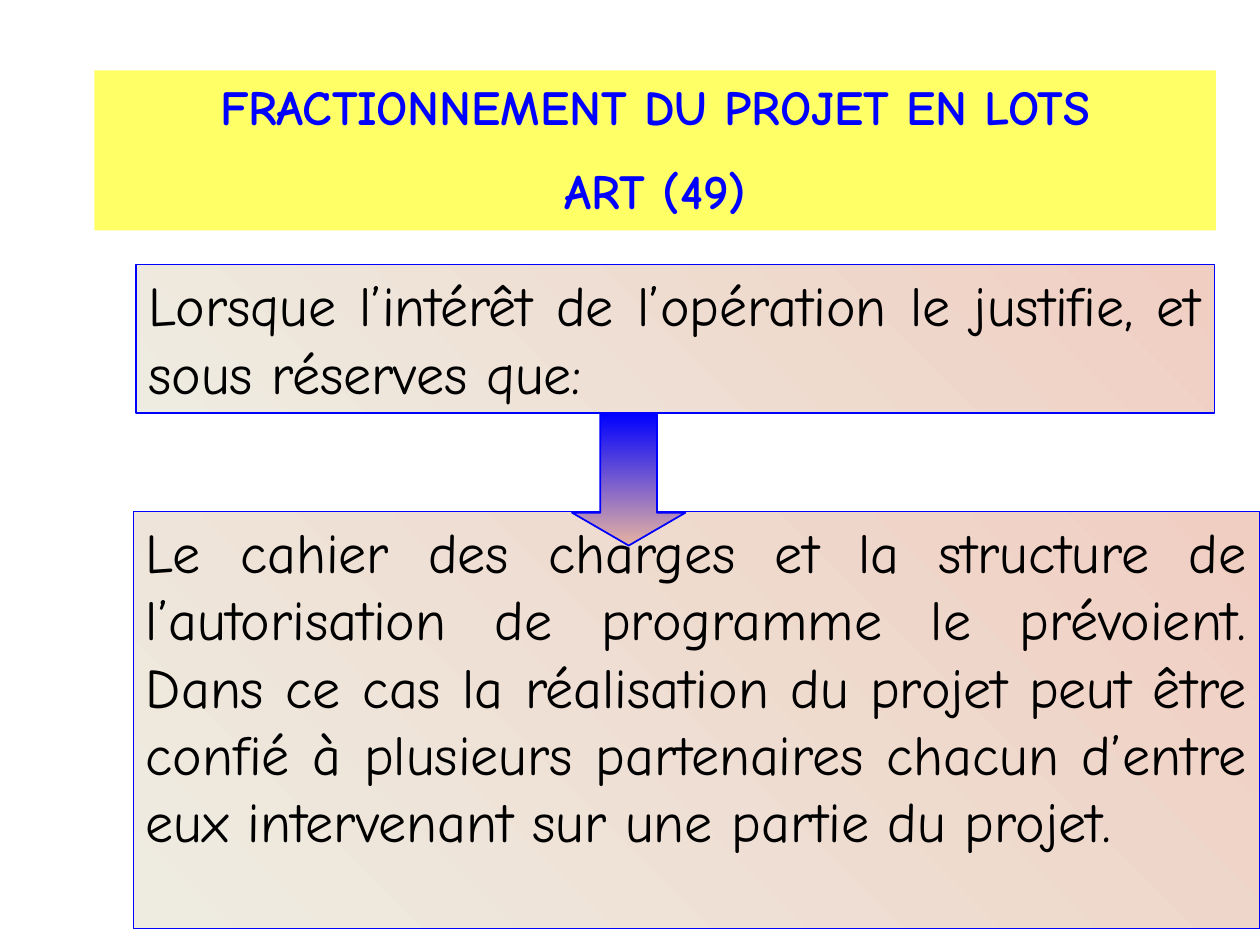
from dataclasses import dataclass
from typing import Optional

from pptx import Presentation
from pptx.dml.color import RGBColor
from pptx.enum.shapes import MSO_SHAPE as Shape
from pptx.enum.text import MSO_ANCHOR as Anchor, PP_ALIGN as Align
from pptx.util import Inches, Pt

FONT = "Comic Neue"
BLUE = "0000FF"
BLACK = "000000"
YELLOW = "FFFF66"
CREAM, PINK = "EEECE1", "F0CEC2"
ROSE = "E7B3A1"


@dataclass
class Box:
    left: float
    top: float
    width: float
    height: float
    fill: tuple[str, ...]
    angle: float = 45
    line: Optional[str] = BLUE
    kind: Shape = Shape.RECTANGLE


@dataclass
class Style:
    size: int
    color: str
    align: Align
    bold: bool = False


HEAD = Style(28, BLUE, Align.CENTER, True)
BODY = Style(32, BLACK, Align.JUSTIFY)


def rgb(code: str) -> RGBColor:
    return RGBColor.from_string(code)


def draw(slide, box: Box):
    """Add a shape; two fill colours make a gradient, one a solid fill."""
    shape = slide.shapes.add_shape(
        box.kind, Inches(box.left), Inches(box.top),
        Inches(box.width), Inches(box.height))
    shape.shadow.inherit = False
    if len(box.fill) == 1:
        shape.fill.solid()
        shape.fill.fore_color.rgb = rgb(box.fill[0])
    else:
        shape.fill.gradient()
        shape.fill.gradient_angle = box.angle
        for stop, code in zip(shape.fill.gradient_stops, box.fill):
            stop.color.rgb = rgb(code)
    if box.line:
        shape.line.color.rgb = rgb(box.line)
        shape.line.width = Pt(1)
    else:
        shape.line.fill.background()
    return shape


def write(shape, text: str, style: Style) -> None:
    frame = shape.text_frame
    frame.word_wrap = True
    frame.vertical_anchor = Anchor.TOP
    frame.text = text
    for i, para in enumerate(frame.paragraphs):
        para.alignment = style.align
        if i:
            para.space_before = Pt(style.size / 2)
        for run in para.runs:
            run.font.name = FONT
            run.font.size = Pt(style.size)
            run.font.bold = style.bold
            run.font.color.rgb = rgb(style.color)


def main() -> None:
    deck = Presentation()
    deck.slide_width, deck.slide_height = Inches(10), Inches(7.5)
    slide = deck.slides.add_slide(deck.slide_layouts[6])

    title = draw(slide, Box(0.75, 0.56, 8.9, 1.27, (YELLOW,), line=None))
    write(title, "FRACTIONNEMENT DU PROJET EN LOTS\nART (49)", HEAD)

    rule = draw(slide, Box(1.06, 4.06, 8.94, 3.31, (CREAM, PINK)))
    write(rule, "Le cahier des charges et la structure de l’autorisation de "
          "programme le prévoient. Dans ce cas la réalisation du projet peut "
          "être confié à plusieurs partenaires chacun d’entre eux intervenant "
          "sur une partie du projet.", BODY)

    case = draw(slide, Box(1.08, 2.1, 8.56, 1.18, (CREAM, PINK)))
    write(case, "Lorsque l’intérêt de l’opération le justifie, et sous "
          "réserves que:", BODY)

    arrow = draw(slide, Box(4.54, 3.28, 0.9, 1.05, (BLUE, ROSE), angle=270,
                            kind=Shape.DOWN_ARROW))
    arrow.adjustments[0] = 0.5
    arrow.adjustments[1] = 0.29

    deck.save("out.pptx")


if __name__ == "__main__":
    main()
